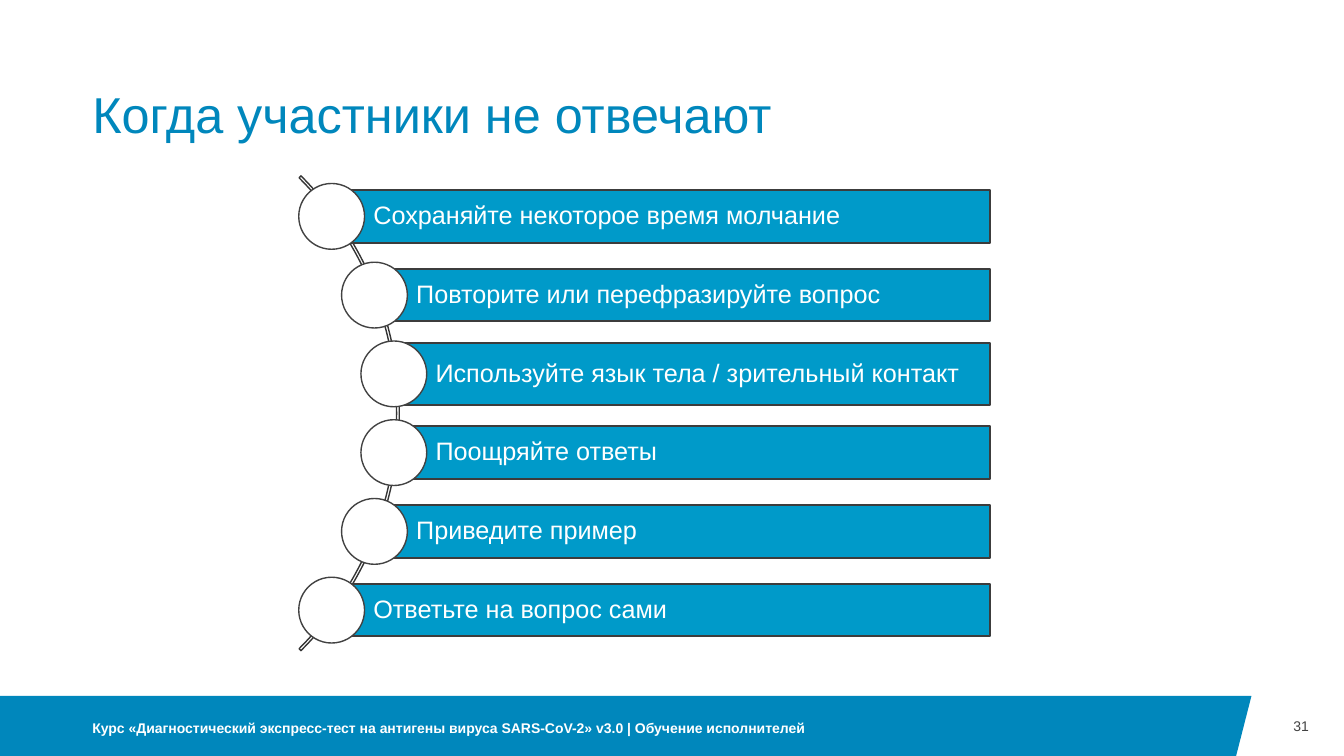
import math

import pptx
import pptx.dml.color
import pptx.enum.shapes
import pptx.enum.text
import pptx.util

Pt = pptx.util.Pt
SHAPE = pptx.enum.shapes.MSO_SHAPE
ALIGN = pptx.enum.text.PP_ALIGN
ANCHOR = pptx.enum.text.MSO_ANCHOR

TITLE = "Когда участники не отвечают"
FOOTER = ("Курс «Диагностический экспресс-тест на антигены вируса SARS-CoV-2» v3.0"
          " | Обучение исполнителей")
STEPS = [
    ("Сохраняйте некоторое время молчание", 37.6),
    ("Повторите или перефразируйте вопрос", 37.6),
    ("Используйте язык тела / зрительный контакт", 44),
    ("Поощряйте ответы", 37.6),
    ("Приведите пример", 37.6),
    ("Ответьте на вопрос сами", 37.6),
]


def rgb(value):
    """Return the colour for a hex string."""
    return pptx.dml.color.RGBColor.from_string(value)


def place(s, left, top, width, height):
    """Move and size a shape, in points."""
    s.left, s.top, s.width, s.height = map(Pt, (left, top, width, height))


def write(s, text, size, color, align=ALIGN.LEFT, anchor=ANCHOR.MIDDLE,
          insets=(0, 0, 0, 0), bold=False, spacing=1.0):
    """Put one formatted paragraph into a shape."""
    tf = s.text_frame
    tf.word_wrap = True
    tf.auto_size = pptx.enum.text.MSO_AUTO_SIZE.NONE
    tf.vertical_anchor = anchor
    tf.margin_left, tf.margin_top, tf.margin_right, tf.margin_bottom = map(Pt, insets)
    p = tf.paragraphs[0]
    p.text = text
    p.alignment = align
    p.line_spacing = spacing
    p.font.name = "Arial"
    p.font.size = Pt(size)
    p.font.bold = bold
    p.font.color.rgb = rgb(color)


def add_shape(slide, kind, box, fill, line, weight):
    """Add a flat preset shape; a fill of None leaves it hollow."""
    s = slide.shapes.add_shape(kind, *map(Pt, box))
    s.shadow.inherit = False
    if fill:
        s.fill.solid()
        s.fill.fore_color.rgb = rgb(fill)
    else:
        s.fill.background()
    s.line.color.rgb = rgb(line)
    s.line.width = Pt(weight)
    return s


def add_title(slide, left, top, width, height):
    """Format the title placeholder in its box."""
    s = slide.shapes.title
    place(s, left, top, width, height)
    write(s, TITLE, 36, "0087BC", anchor=ANCHOR.BOTTOM, spacing=0.9)


def add_footer(slide, left, top, width, height):
    """Draw the slanted footer band, its caption and the slide number."""
    band_right, slant = left + 894, 11
    builder = slide.shapes.build_freeform(Pt(left), Pt(top), scale=1.0)
    corners = [(band_right, top), (band_right - slant, top + height), (left, top + height)]
    builder.add_line_segments([(Pt(x), Pt(y)) for x, y in corners], close=True)
    band = builder.convert_to_shape()
    band.shadow.inherit = False
    band.fill.solid()
    band.fill.fore_color.rgb = rgb("0087BC")
    band.line.fill.background()

    caption = slide.shapes.add_textbox(Pt(left + 66), Pt(top + 3.6), Pt(576), Pt(height - 3.6))
    write(caption, FOOTER, 10, "FFFFFF", bold=True)
    number = slide.shapes.add_textbox(
        Pt(band_right), Pt(top), Pt(width - band_right - 25), Pt(height))
    write(number, "31", 10, "424242", align=ALIGN.RIGHT)


def add_step_arc(slide, left, top, width, height):
    """Draw bars whose dots follow a quarter arc at the left of the box."""
    right, center_y = left + width, top + height / 2
    center_x, arc_radius, dot_radius = left - 168, 239.8, 23.5
    track_radius, pitch = 237.6, 56.25

    arc_box = (center_x - arc_radius, center_y - arc_radius, 2 * arc_radius, 2 * arc_radius)
    arc = add_shape(slide, SHAPE.BLOCK_ARC, arc_box, None, "353535", 1)
    for i, value in enumerate((189, 27, 0.004)):
        arc.adjustments[i] = value

    for i, (text, bar_height) in enumerate(STEPS):
        offset = (i - (len(STEPS) - 1) / 2) * pitch
        x = center_x + math.sqrt(track_radius ** 2 - offset ** 2)
        y = center_y + offset
        bar_box = (x, y - bar_height / 2, right - x, bar_height)
        bar = add_shape(slide, SHAPE.RECTANGLE, bar_box, "009AC9", "3C3C3C", 1.5)
        write(bar, text, 18, "FFFFFF", insets=(29.8, 3.6, 3.6, 3.6), spacing=0.9)
        dot_box = (x - dot_radius, y - dot_radius, 2 * dot_radius, 2 * dot_radius)
        add_shape(slide, SHAPE.OVAL, dot_box, "FFFFFF", "424242", 1)


def main():
    """Build and save the slide."""
    prs = pptx.Presentation()
    prs.slide_width, prs.slide_height = Pt(960), Pt(540)
    slide = prs.slides.add_slide(prs.slide_layouts[5])
    add_footer(slide, 0, 497, 960, 43)
    add_step_arc(slide, 213.4, 125.6, 494, 339.2)
    add_title(slide, 66, 29, 828, 74)
    prs.save("out.pptx")


if __name__ == "__main__":
    main()
